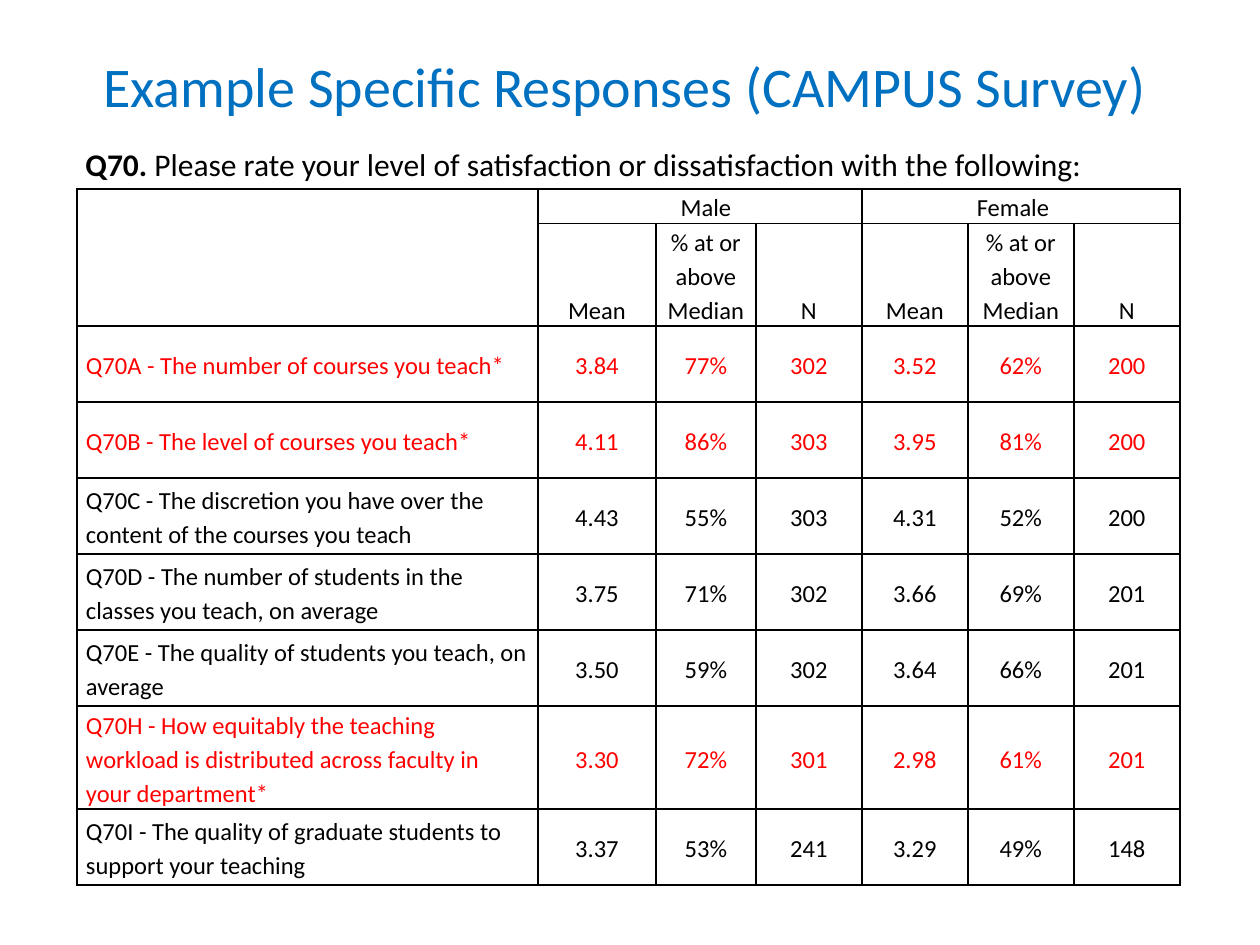
from dataclasses import dataclass

from pptx import Presentation
from pptx.dml.color import RGBColor
from pptx.enum.text import MSO_ANCHOR, PP_ALIGN
from pptx.oxml.ns import qn
from pptx.util import Emu, Pt
from lxml import etree

LEFT, CENTER = PP_ALIGN.LEFT, PP_ALIGN.CENTER
MIDDLE, BOTTOM = MSO_ANCHOR.MIDDLE, MSO_ANCHOR.BOTTOM
EMU_PER_PX = 914400 / 126


@dataclass(frozen=True)
class Theme:
    font: str = "Calibri"
    title_color: str = "0070C0"
    text_color: str = "000000"
    highlight: str = "FF0000"
    title_size: int = 32
    question_size: int = 18
    table_size: int = 14
    line_spacing: float = 1.15
    thin: float = 1
    thick: float = 1.5


THEME = Theme()

COLUMN_WIDTHS = [461, 118, 100, 106, 106, 106, 106]
ROW_HEIGHTS = [25, 74] + [76] * 7
GROUP_EDGES = {0, 1, 4, 7}  # vertical rules that enclose the column groups
GROUP_HEADS = ["", "", "Male", "", "", "Female", ""]
COLUMN_HEADS = [""] + ["Mean", "% at or above Median", "N"] * 2
RESPONSES = [
    ["Q70A - The number of courses you teach*",
     "3.84", "77%", "302", "3.52", "62%", "200"],
    ["Q70B - The level of courses you teach*",
     "4.11", "86%", "303", "3.95", "81%", "200"],
    ["Q70C - The discretion you have over the content of the courses you teach",
     "4.43", "55%", "303", "4.31", "52%", "200"],
    ["Q70D - The number of students in the classes you teach, on average",
     "3.75", "71%", "302", "3.66", "69%", "201"],
    ["Q70E - The quality of students you teach, on average",
     "3.50", "59%", "302", "3.64", "66%", "201"],
    ["Q70H - How equitably the teaching workload is distributed across faculty "
     "in your department*",
     "3.30", "72%", "301", "2.98", "61%", "201"],
    ["Q70I - The quality of graduate students to support your teaching",
     "3.37", "53%", "241", "3.29", "49%", "148"],
]


def px(value):
    return Emu(round(value * EMU_PER_PX))


def style_run(run, size, color, bold=False):
    run.font.name = THEME.font
    run.font.size = Pt(size)
    run.font.bold = bold
    run.font.color.rgb = RGBColor.from_string(color)


def format_title(title, text):
    title.left, title.top, title.width, title.height = map(px, (58, 6, 1134, 158))
    title.text_frame.text = text
    title.text_frame.vertical_anchor = MIDDLE
    para = title.text_frame.paragraphs[0]
    para.alignment = CENTER
    style_run(para.runs[0], THEME.title_size, THEME.title_color)


def add_question(slide, number, wording):
    box = slide.shapes.add_textbox(*map(px, (73, 139, 1103, 50)))
    frame = box.text_frame
    frame.word_wrap = True
    frame.vertical_anchor = MIDDLE
    for text, bold in ((number, True), (wording, False)):
        run = frame.paragraphs[0].add_run()
        run.text = text
        style_run(run, THEME.question_size, THEME.text_color, bold)


def vertical_rule(row, edge):
    if edge in GROUP_EDGES:
        return THEME.thick
    return THEME.thin if row > 0 else None


def horizontal_rule(edge, column):
    if edge in (0, len(ROW_HEIGHTS)):
        return THEME.thick
    return None if edge == 1 and column == 0 else THEME.thin


def set_borders(cell, row, column):
    """Draw the four sides; a width of None leaves that side without a line."""
    sides = {
        "a:lnL": vertical_rule(row, column),
        "a:lnR": vertical_rule(row, column + 1),
        "a:lnT": horizontal_rule(row, column),
        "a:lnB": horizontal_rule(row + 1, column),
    }
    properties = cell._tc.get_or_add_tcPr()
    for tag, width in sides.items():
        line = etree.SubElement(properties, qn(tag))
        if width is None:
            etree.SubElement(line, qn("a:noFill"))
            continue
        line.set("w", str(Pt(width)))
        fill = etree.SubElement(line, qn("a:solidFill"))
        etree.SubElement(fill, qn("a:srgbClr"), val=THEME.text_color)


def fill_cell(cell, text, color, alignment, anchor):
    cell.fill.background()
    cell.margin_left = cell.margin_right = px(9)
    cell.margin_top = cell.margin_bottom = 0
    cell.vertical_anchor = anchor
    para = cell.text_frame.paragraphs[0]
    para.alignment = alignment
    para.line_spacing = THEME.line_spacing
    if text:
        para.text = text
        style_run(para.runs[0], THEME.table_size, color)
    else:
        # Keeps an empty cell from stretching its row
        etree.SubElement(para._p, qn("a:endParaRPr"), sz=str(THEME.table_size * 100))


def add_response_table(slide):
    rows = [GROUP_HEADS, COLUMN_HEADS] + RESPONSES
    frame = slide.shapes.add_table(
        len(rows), len(COLUMN_WIDTHS), px(77), px(189),
        px(sum(COLUMN_WIDTHS)), px(sum(ROW_HEIGHTS)))
    table = frame.table
    table.first_row = table.horz_banding = False
    for column, width in zip(table.columns, COLUMN_WIDTHS):
        column.width = px(width)
    for row, height in zip(table.rows, ROW_HEIGHTS):
        row.height = px(height)
    for r, texts in enumerate(rows):
        color = THEME.highlight if texts[0].endswith("*") else THEME.text_color
        anchor = BOTTOM if r < 2 else MIDDLE
        for c, text in enumerate(texts):
            cell = table.cell(r, c)
            set_borders(cell, r, c)
            alignment = LEFT if c == 0 or text == "Female" else CENTER
            fill_cell(cell, text, color, alignment, anchor)


def main():
    deck = Presentation()
    deck.slide_width, deck.slide_height = px(1260), px(945)
    slide = deck.slides.add_slide(deck.slide_layouts[5])
    format_title(slide.shapes.title, "Example Specific Responses (CAMPUS Survey)")
    add_response_table(slide)
    add_question(slide, "Q70. ", "Please rate your level of satisfaction or "
                 "dissatisfaction with the following:")
    deck.save("out.pptx")


if __name__ == "__main__":
    main()
